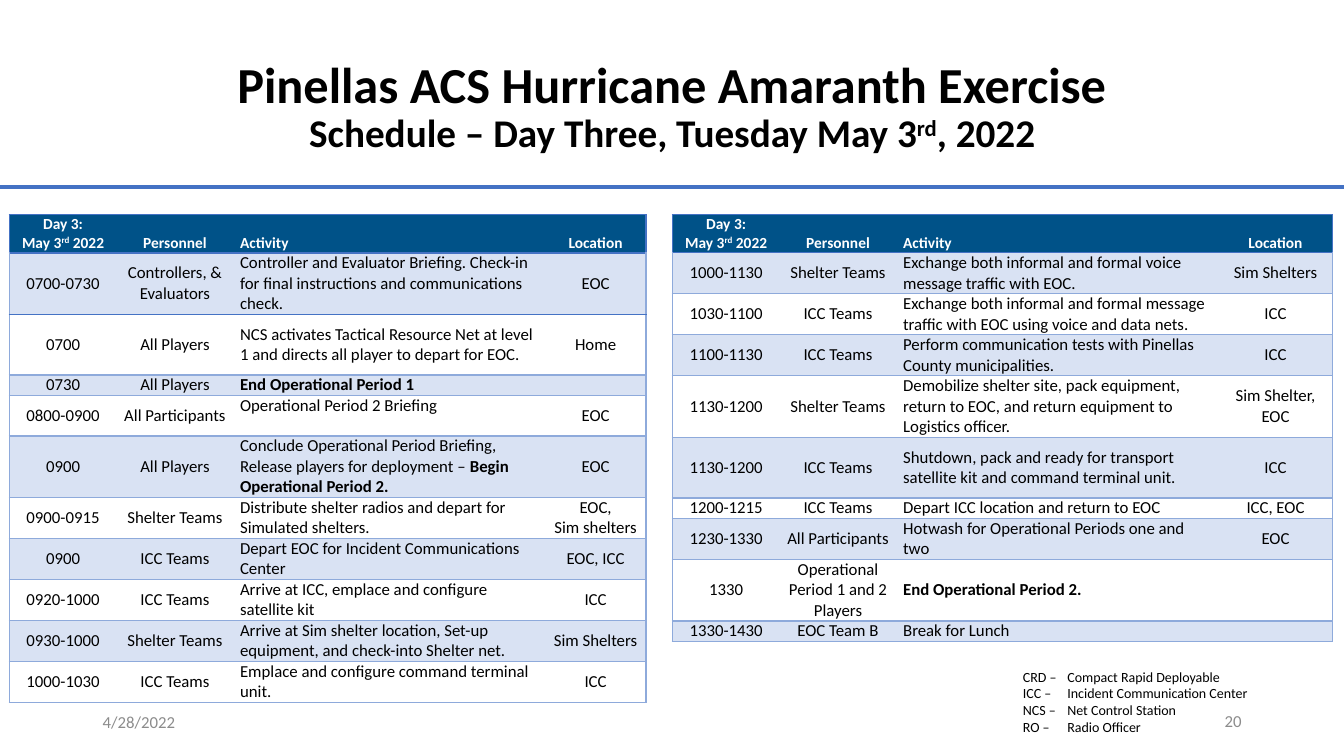
from copy import deepcopy
from dataclasses import dataclass

from lxml import etree
from pptx import Presentation
from pptx.dml.color import RGBColor
from pptx.enum import shapes, text
from pptx.oxml import ns
from pptx.util import Cm, Pt


@dataclass(frozen=True)
class Theme:
    font: str = "Calibri"
    black: str = "000000"
    white: str = "FFFFFF"
    gray: str = "8C8C8C"
    navy: str = "005288"
    blue: str = "4472C4"
    sky: str = "8EAADB"
    pale: str = "D9E2F3"
    title: int = 36
    sub: int = 28
    head: int = 11
    body: int = 12
    key: int = 10


LOOK = Theme()
LEFT, MID, RIGHT = text.PP_ALIGN.LEFT, text.PP_ALIGN.CENTER, text.PP_ALIGN.RIGHT
TOP, HALF, BASE = text.MSO_ANCHOR.TOP, text.MSO_ANCHOR.MIDDLE, text.MSO_ANCHOR.BOTTOM
PLAIN = "{2D5ABB26-0587-4C30-8999-92F81FD0307C}"
HEAD_H, LINE_H = 0.94, 0.51

HEAD = ([("Day 3:\nMay 3", ""), ("rd", "sup"), (" 2022", "")], "Personnel", "Activity", "Location")
EARLY = [
    (3, "0700-0730", "Controllers, & Evaluators",
     "Controller and Evaluator Briefing. Check-in for final instructions and communications check.", "EOC"),
    (3, "0700", "All Players",
     "NCS activates Tactical Resource Net at level 1 and directs all player to depart for EOC.", "Home"),
    (1, "0730", "All Players", [("End Operational Period 1", "bold")], ""),
    (2, "0800-0900", "All Participants", "Operational Period 2 Briefing", "EOC"),
    (3, "0900", "All Players",
     [("Conclude Operational Period Briefing, Release players for deployment – ", ""),
      ("Begin Operational Period 2.", "bold")], "EOC"),
    (2, "0900-0915", "Shelter Teams",
     "Distribute shelter radios and depart for Simulated shelters.", "EOC,\nSim shelters"),
    (2, "0900", "ICC Teams", "Depart EOC for Incident Communications Center", "EOC, ICC"),
    (2, "0920-1000", "ICC Teams", "Arrive at ICC, emplace and configure satellite kit", "ICC"),
    (2, "0930-1000", "Shelter Teams",
     "Arrive at Sim shelter location, Set-up equipment, and check-into Shelter net.", "Sim Shelters"),
    (2, "1000-1030", "ICC Teams", "Emplace and configure command terminal unit.", "ICC"),
]
LATE = [
    (2, "1000-1130", "Shelter Teams",
     "Exchange both informal and formal voice message traffic with EOC.", "Sim Shelters"),
    (2, "1030-1100", "ICC Teams",
     "Exchange both informal and formal message traffic with EOC using voice and data nets.", "ICC"),
    (2, "1100-1130", "ICC Teams",
     "Perform communication tests with Pinellas County municipalities.", "ICC"),
    (3, "1130-1200", "Shelter Teams",
     "Demobilize shelter site, pack equipment, return to EOC, and return equipment to Logistics officer.",
     "Sim Shelter, EOC"),
    (3, "1130-1200", "ICC Teams",
     "Shutdown, pack and ready for transport satellite kit and command terminal unit.", "ICC"),
    (1, "1200-1215", "ICC Teams", "Depart ICC location and return to EOC", "ICC, EOC"),
    (2, "1230-1330", "All Participants", "Hotwash for Operational Periods one and two", "EOC"),
    (3, "1330", "Operational Period 1 and 2 Players", [("End Operational Period 2.", "bold")], ""),
    (1, "1330-1430", "EOC Team B", "Break for Lunch", ""),
]
KEY = ["CRD – \tCompact Rapid Deployable", "ICC – \tIncident Communication Center",
       "NCS –\tNet Control Station", "RO – \tRadio Officer"]


def assign(item, **values):
    for name, value in values.items():
        setattr(item, name, value)


def put(para, parts, size, color, bold=False):
    if isinstance(parts, str):
        parts = [(parts, "")]
    for words, kind in parts:
        for i, line in enumerate(words.split("\n")):
            if i:
                para.add_line_break()
                para._p[-1].append(deepcopy(run._r.rPr))
            if not line:
                continue
            run = para.add_run()
            run.text = line
            assign(run.font, name=LOOK.font, size=Pt(size), bold=bold or kind == "bold")
            run.font.color.rgb = RGBColor.from_string(color)
            if kind == "sup":
                run._r.rPr.set("baseline", "30000")
    if len(para.runs) == 0:
        etree.SubElement(para._p, ns.qn("a:endParaRPr"), sz=str(size * 100))


def edge(cell, side, color, width):
    line = etree.SubElement(cell._tc.get_or_add_tcPr(), ns.qn("a:ln" + side), w=str(Pt(width)))
    fill = etree.SubElement(line, ns.qn("a:solidFill"))
    etree.SubElement(fill, ns.qn("a:srgbClr"), val=color)


def heading(slide):
    title = slide.shapes.title
    assign(title, left=Cm(4.47), top=Cm(1.02), width=Cm(24.94), height=Cm(3.4))
    assign(title.text_frame, word_wrap=True, vertical_anchor=HALF, auto_size=text.MSO_AUTO_SIZE.NONE)
    para = title.text_frame.paragraphs[0]
    assign(para, alignment=MID, line_spacing=0.9)
    put(para, "Pinellas ACS Hurricane Amaranth Exercise\n", LOOK.title, LOOK.black, True)
    put(para, [("Schedule – Day Three, Tuesday May 3", ""), ("rd", "sup"), (", 2022", "")],
        LOOK.sub, LOOK.black, True)


def rule(slide, width):
    line = slide.shapes.add_connector(shapes.MSO_CONNECTOR.STRAIGHT, 0, Cm(4.72), width, Cm(4.72))
    line.line.color.rgb = RGBColor.from_string(LOOK.blue)
    line.line.width = Pt(3)
    etree.SubElement(line._element.spPr, ns.qn("a:effectLst"))


def agenda(slide, left, widths, rows, dark):
    tall = [HEAD_H] + [LINE_H * row[0] for row in rows]
    frame = slide.shapes.add_table(len(tall), len(widths), Cm(left), Cm(5.41),
                                   Cm(sum(widths)), Cm(sum(tall)))
    grid = frame.table
    grid.horz_banding = False
    grid._tbl.tblPr.find(ns.qn("a:tableStyleId")).text = PLAIN
    for col, width in zip(grid.columns, widths):
        col.width = Cm(width)
    for r, (row, height) in enumerate(zip([(2, *HEAD)] + rows, tall)):
        grid.rows[r].height = Cm(height)
        for c, words in enumerate(row[1:]):
            fill_cell(grid.cell(r, c), r, c, words, row[0], dark)


def fill_cell(cell, r, c, words, lines, dark):
    side = LOOK.sky if r else LOOK.blue
    if c == 0:
        edge(cell, "L", side, 1)
    if c == 3:
        edge(cell, "R", side, 1)
    for name, i in (("T", r), ("B", r + 1)):
        edge(cell, name, LOOK.blue if i in dark else LOOK.sky, dark.get(i, 1))
    if r % 2 or r == 0:
        cell.fill.solid()
        cell.fill.fore_color.rgb = RGBColor.from_string(LOOK.pale if r else LOOK.navy)
    else:
        cell.fill.background()
    if r == 0:
        anchor = BASE if c else TOP
    else:
        anchor = TOP if c == 2 and lines < 3 else HALF
    assign(cell, margin_left=Cm(0.18), margin_right=Cm(0.18), margin_top=0, margin_bottom=0,
           vertical_anchor=anchor)
    para = cell.text_frame.paragraphs[0]
    assign(para, alignment=LEFT if c == 2 else MID, space_after=Pt(3))
    put(para, words, LOOK.body if r else LOOK.head, LOOK.black if r else LOOK.white, r == 0)


def label(slide, box, rows, size, color, align=LEFT, hang=0, **frame):
    shape = slide.shapes.add_textbox(*map(Cm, box))
    body = shape.text_frame
    assign(body, **frame)
    for i, words in enumerate(rows):
        para = body.add_paragraph() if i else body.paragraphs[0]
        para.alignment = align
        if hang:
            props = para._p.get_or_add_pPr()
            props.set("marL", str(Cm(hang)))
            props.set("indent", str(-Cm(hang)))
        put(para, words, size, color)


def main():
    deck = Presentation()
    assign(deck, slide_width=Cm(33.87), slide_height=Cm(19.05))
    slide = deck.slides.add_slide(deck.slide_layouts[5])
    rule(slide, deck.slide_width)
    heading(slide)
    agenda(slide, 0.23, (2.72, 2.92, 7.87, 2.54), EARLY, {0: 1, 1: 1.5, 2: 1})
    agenda(slide, 16.94, (2.72, 2.92, 8.13, 2.87), LATE, {0: 1, 1: 1})
    foot = {"word_wrap": True, "vertical_anchor": HALF}
    label(slide, (2.34, 17.67, 7.62, 1.02), ["4/28/2022"], LOOK.body, LOOK.gray, **foot)
    label(slide, (23.92, 17.66, 7.62, 1.02), ["20"], LOOK.body, LOOK.gray, RIGHT, **foot)
    label(slide, (25.53, 16.71, 6.25, 1.96), KEY, LOOK.key, LOOK.black, hang=1.12,
          word_wrap=False, auto_size=text.MSO_AUTO_SIZE.SHAPE_TO_FIT_TEXT)
    deck.save("out.pptx")


if __name__ == "__main__":
    main()
